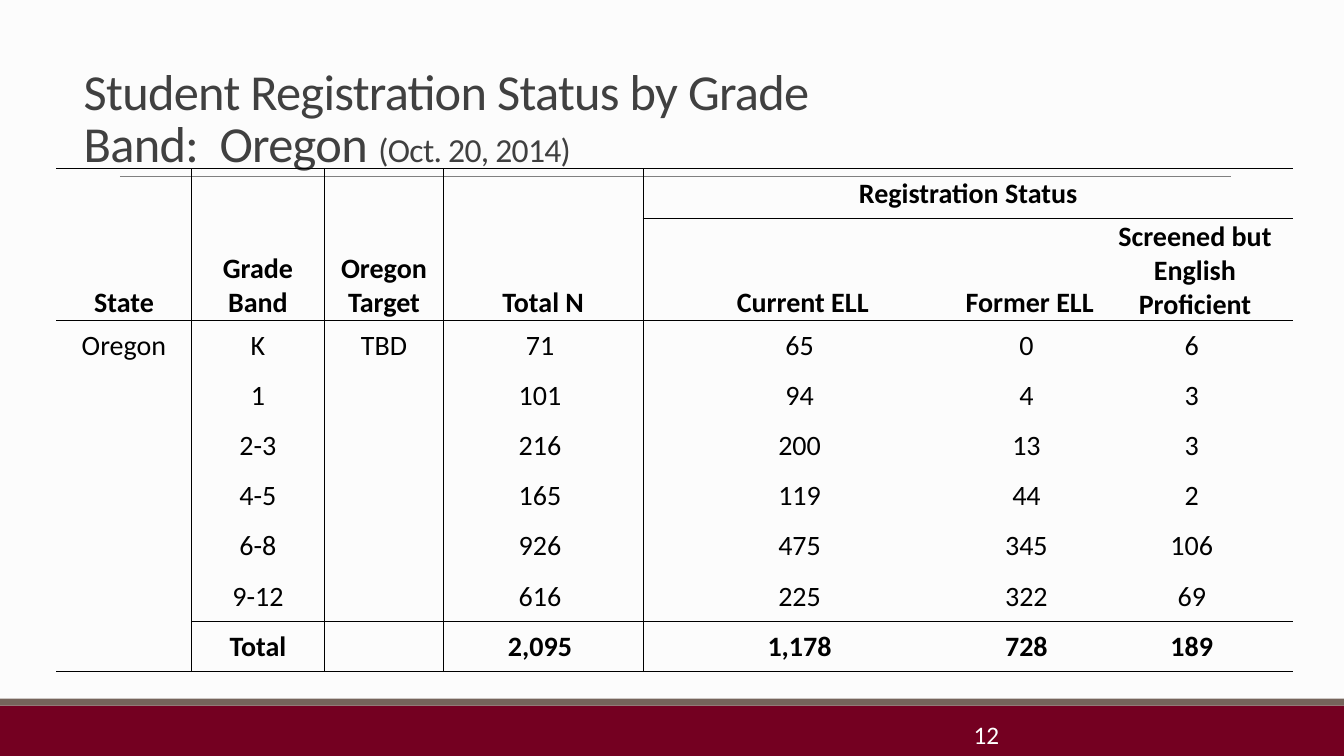
from dataclasses import dataclass

from pptx import Presentation, util as u
from pptx.dml.color import RGBColor
from pptx.enum import shapes, text
from pptx.oxml.ns import qn
from lxml import etree


@dataclass(frozen=True)
class Theme:
    face: str = "Calibri"
    back: str = "FCFCFC"
    wine: str = "740021"
    taupe: str = "75645B"
    rule: str = "808080"
    head: str = "404040"
    ink: str = "000000"
    light: str = "FFFFFF"
    big: int = 36
    mid: int = 24
    cell: int = 20
    small: int = 18
    hair: float = 0.5


class Page:
    """Draws on one slide; lengths are percent of the slide's width and height."""

    def __init__(self, deck, theme):
        self.theme = theme
        self.wide, self.high = deck.slide_width, deck.slide_height
        self.slide = deck.slides.add_slide(deck.slide_layouts[5])
        fill = self.slide.background.fill
        fill.solid()
        fill.fore_color.rgb = RGBColor.from_string(theme.back)

    def x(self, share):
        return u.Emu(round(self.wide * share / 100))

    def y(self, share):
        return u.Emu(round(self.high * share / 100))

    def area(self, left, top, width, height):
        return self.x(left), self.y(top), self.x(width), self.y(height)

    def style(self, para, color, size=None, bold=None):
        font = para.font
        font.name = self.theme.face
        font.color.rgb = RGBColor.from_string(color)
        font.bold = bold
        if size:
            font.size = u.Pt(size)

    def bar(self, area, color):
        shape = self.slide.shapes.add_shape(
            shapes.MSO_SHAPE.RECTANGLE, *self.area(*area))
        shape.shadow.inherit = False
        shape.fill.solid()
        shape.fill.fore_color.rgb = RGBColor.from_string(color)
        shape.line.fill.background()

    def line(self, left, right, top):
        line = self.slide.shapes.add_connector(
            shapes.MSO_CONNECTOR.STRAIGHT,
            self.x(left), self.y(top), self.x(right), self.y(top))
        line.line.width = u.Pt(self.theme.hair)
        line.line.color.rgb = RGBColor.from_string(self.theme.rule)
        etree.SubElement(line._element.spPr, qn("a:effectLst"))

    def title(self, area, parts):
        """Fill the title with (words, size) runs."""
        box = self.slide.shapes.title
        box.left, box.top, box.width, box.height = self.area(*area)
        frame = box.text_frame
        frame.auto_size = text.MSO_AUTO_SIZE.NONE
        frame.vertical_anchor = text.MSO_ANCHOR.BOTTOM
        para = frame.paragraphs[0]
        para.alignment = text.PP_ALIGN.LEFT
        para.line_spacing = 0.85
        self.style(para, self.theme.head)
        for words, size in parts:
            run = para.add_run()
            run.text = words
            run.font.size = u.Pt(size)
            run.font._element.set("spc", "-50")

    def label(self, area, words):
        frame = self.slide.shapes.add_textbox(*self.area(*area)).text_frame
        frame.word_wrap = True
        frame.vertical_anchor = text.MSO_ANCHOR.MIDDLE
        frame.text = words
        self.style(frame.paragraphs[0], self.theme.light, self.theme.small)

    def edge(self, cell, side, drawn):
        props = cell._tc.get_or_add_tcPr()
        line = etree.SubElement(props, qn(f"a:ln{side}"), w=str(u.Pt(self.theme.hair)))
        if drawn:
            fill = etree.SubElement(line, qn("a:solidFill"))
            etree.SubElement(fill, qn("a:srgbClr"), val=self.theme.ink)
        else:
            etree.SubElement(line, qn("a:noFill"))

    def table(self, left, top, cols, rows, data, bold, across, down):
        """Lay out data; across maps a row edge to its first ruled column,
        down holds the ruled column edges."""
        table = self.slide.shapes.add_table(
            len(rows), len(cols),
            *self.area(left, top, sum(cols), sum(rows))).table
        table.first_row = table.horz_banding = False
        for col, share in zip(table.columns, cols):
            col.width = self.x(share)
        for row, share in zip(table.rows, rows):
            row.height = self.y(share)
        for r, line in enumerate(data):
            for c, words in enumerate(line):
                cell = table.cell(r, c)
                for side, drawn in (
                        ("L", c in down), ("R", c + 1 in down),
                        ("T", c >= across.get(r, len(cols))),
                        ("B", c >= across.get(r + 1, len(cols)))):
                    self.edge(cell, side, drawn)
                cell.fill.background()
                cell.margin_left = cell.margin_right = cell.margin_top = u.Inches(0.01)
                cell.margin_bottom = 0
                cell.vertical_anchor = (text.MSO_ANCHOR.BOTTOM if r == 1
                                        else text.MSO_ANCHOR.MIDDLE)
                cell.text = words
                para = cell.text_frame.paragraphs[0]
                para.alignment = text.PP_ALIGN.CENTER
                self.style(para, self.theme.ink, self.theme.cell, r in bold)
        return table


COUNTS = [
    ("K", "71", "65", "0", "6"),
    ("1", "101", "94", "4", "3"),
    ("2-3", "216", "200", "13", "3"),
    ("4-5", "165", "119", "44", "2"),
    ("6-8", "926", "475", "345", "106"),
    ("9-12", "616", "225", "322", "69"),
    ("Total", "2,095", "1,178", "728", "189"),
]


def main():
    deck = Presentation()
    deck.slide_width, deck.slide_height = u.Inches(13.33), u.Inches(7.5)
    theme = Theme()
    page = Page(deck, theme)

    page.bar((0, 93.33, 100, 6.67), theme.wine)
    page.bar((0, 92.4, 100, 0.93), theme.taupe)
    page.line(8.93, 91.6, 23.33)
    page.title((5.48, 2.27, 58.74, 21.2), [
        ("Student Registration Status by Grade Band:  Oregon ", theme.big),
        ("(Oct. 20, 2014)", theme.mid)])
    page.label((71.7, 94.4, 23.33, 5.6), "12")

    data = [
        ["", "", "", "", "Registration Status", "", ""],
        ["State", "Grade Band", "Oregon Target", "Total N", "Current ELL",
         "Former ELL", "Screened but English Proficient"],
    ]
    for band, *counts in COUNTS:
        lead = ("Oregon", "TBD") if band == "K" else ("", "")
        data.append([lead[0], band, lead[1], *(f"{n} " for n in counts)])
    step = 6.63
    table = page.table(
        4.2, 22.27, [10.05, 9.9, 8.85, 14.85, 23.78, 9.98, 14.63],
        [step, 2 * step] + [step] * len(COUNTS), data, bold={0, 1, 8},
        across={0: 0, 1: 4, 2: 0, 8: 1, 9: 0}, down={1, 2, 3, 4})
    table.cell(0, 4).merge(table.cell(0, 6))

    deck.save("out.pptx")


if __name__ == "__main__":
    main()
